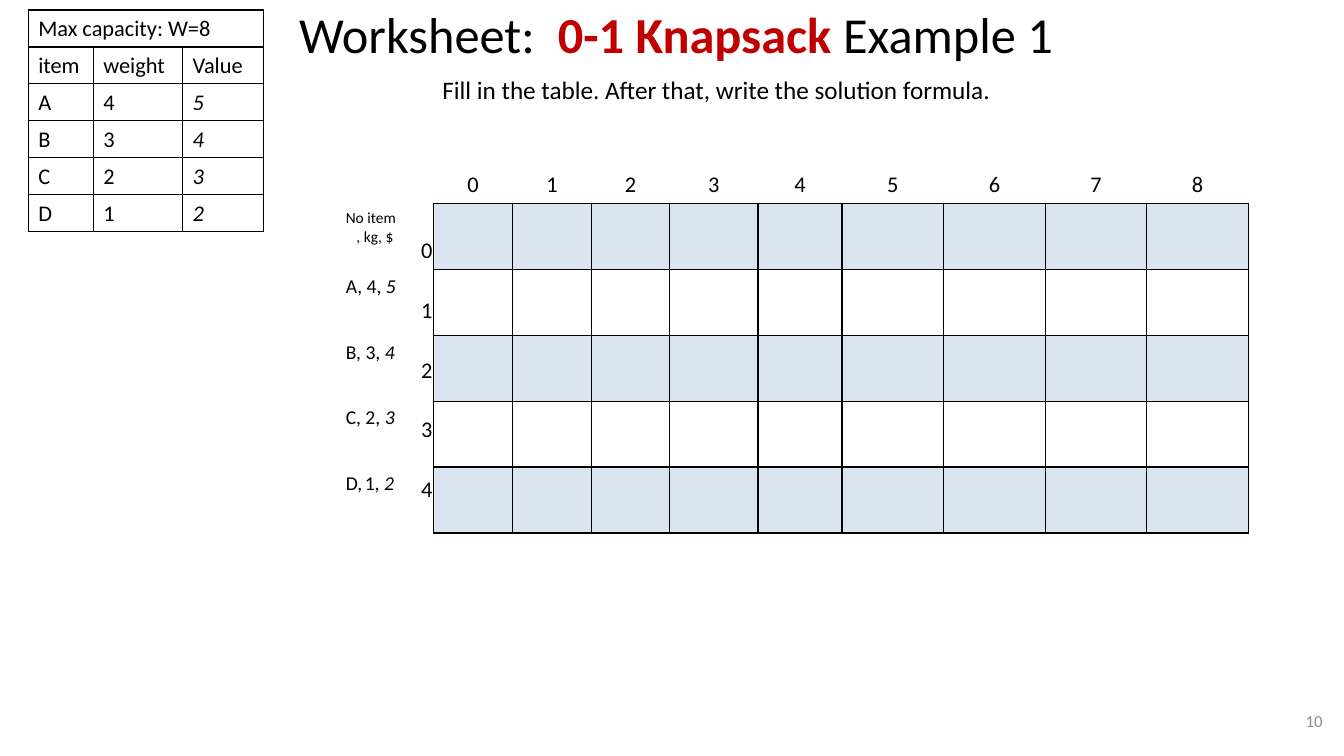
import lxml.etree
import pptx
import pptx.dml.color
import pptx.enum.text
import pptx.oxml
import pptx.oxml.ns
import pptx.util

Cm = pptx.util.Cm
Pt = pptx.util.Pt
ALIGN = pptx.enum.text.PP_ALIGN
ANCHOR = pptx.enum.text.MSO_ANCHOR
qn = pptx.oxml.ns.qn

BLACK = pptx.dml.color.RGBColor(0x00, 0x00, 0x00)
WHITE = pptx.dml.color.RGBColor(0xFF, 0xFF, 0xFF)
RED = pptx.dml.color.RGBColor(0xC0, 0x00, 0x00)
GREY = pptx.dml.color.RGBColor(0x8C, 0x8C, 0x8C)
BLUE = pptx.dml.color.RGBColor(0x4F, 0x81, 0xBD)

NO_STYLE = "{2D5ABB26-0587-4C30-8999-92F81FD0307C}"
ITEMS = [("A", 4, 5), ("B", 3, 4), ("C", 2, 3), ("D", 1, 2)]
CAPACITY = 8


def style_paragraph(para, size, color=BLACK, align=ALIGN.LEFT):
    para.font.name = "Calibri"
    para.font.size = Pt(size)
    para.font.color.rgb = color
    para.alignment = align


def draw_borders(cell, sides):
    """Give the cell thin black lines on the sides named in "LRTB" order."""
    properties = cell._tc.get_or_add_tcPr()
    for position, side in enumerate(sides):
        line = lxml.etree.Element(qn("a:ln" + side), w=str(Pt(1)))
        fill = lxml.etree.SubElement(line, qn("a:solidFill"))
        lxml.etree.SubElement(fill, qn("a:srgbClr"), val=str(BLACK))
        properties.insert(position, line)


deck = pptx.Presentation()
deck.slide_width, deck.slide_height = Cm(33.87), Cm(19.05)
page = deck.slides.add_slide(deck.slide_layouts[6])

# Title, instruction and page number
texts = [
    ((5.51, 0.2, 23.06, 1.27), 36, BLACK, ALIGN.CENTER, ANCHOR.MIDDLE,
     ["Worksheet:  ", "0-1 Knapsack ", "Example 1"]),
    ((10.9, 1.75, 14.5, 1.02), 18, BLACK, ALIGN.LEFT, ANCHOR.TOP,
     ["Fill in the table. After that, write the solution formula."]),
    ((25.68, 17.65, 7.9, 1.02), 12, GREY, ALIGN.RIGHT, ANCHOR.MIDDLE, ["10"]),
]
for place, size, color, align, anchor, words in texts:
    box = page.shapes.add_textbox(*[Cm(length) for length in place])
    box.text_frame.word_wrap = True
    box.text_frame.vertical_anchor = anchor
    para = box.text_frame.paragraphs[0]
    style_paragraph(para, size, color, align)
    for word in words:
        span = para.add_run()
        span.text = word
        if word.startswith("0-1"):
            span.font.bold = True
            span.font.color.rgb = RED

# Empty tables: left, top, column widths, row height, row count
layouts = [
    (8.46, 3.47, [2.46, 2, 1.98, 1.98, 2.22, 2.12] + [2.56] * 4, 1.66, 6),
    (10.36, 5.84, [1.07], 1.51, 5),
    (0.71, 0.25, [1.64, 2.25, 2.05], 0.93, 6),
]
tables = []
for left, top, widths, height, count in layouts:
    frame = page.shapes.add_table(count, len(widths), Cm(left), Cm(top),
                                  Cm(sum(widths)), Cm(height * count))
    table = frame.table
    table.first_row = table.horz_banding = False
    table._tbl.tblPr.find(qn("a:tableStyleId")).text = NO_STYLE
    for column, width in zip(table.columns, widths):
        column.width = Cm(width)
    for row in table.rows:
        row.height = Cm(height)
    for cell in table.iter_cells():
        cell.fill.background()
        style_paragraph(cell.text_frame.paragraphs[0], 16)
    tables.append(table)
worksheet, row_numbers, item_list = tables

# Worksheet: weights across the top, bordered cells shaded on every other row
for weight in range(CAPACITY + 1):
    column = weight + 1
    heading = worksheet.cell(0, column)
    heading.vertical_anchor = ANCHOR.BOTTOM
    heading.text_frame.paragraphs[0].add_run().text = str(weight)
    heading.text_frame.paragraphs[0].alignment = ALIGN.CENTER
    draw_borders(heading, "B")
    for row in range(1, len(ITEMS) + 2):
        cell = worksheet.cell(row, column)
        draw_borders(cell, "LRTB")
        if row % 2:
            cell.fill.solid()
            cell.fill.fore_color.rgb = BLUE
            tint = cell._tc.tcPr.find(qn("a:solidFill")).find(qn("a:srgbClr"))
            lxml.etree.SubElement(tint, qn("a:alpha"), val="20000")

# Worksheet: row labels
for row in range(1, len(ITEMS) + 2):
    label = worksheet.cell(row, 0)
    label.fill.solid()
    label.fill.fore_color.rgb = WHITE
    draw_borders(label, "R")

no_item = worksheet.cell(1, 0).text_frame
no_item.paragraphs[0].add_run().text = "No item"
units = no_item.add_paragraph()
units.add_run().text = ", kg, $"
for para in no_item.paragraphs:
    style_paragraph(para, 11)
units._p.get_or_add_pPr().set("marL", str(Cm(0.27)))

for row, (name, weight, value) in enumerate(ITEMS, start=2):
    para = worksheet.cell(row, 0).text_frame.paragraphs[0]
    style_paragraph(para, 14)
    for word in (f"{name},", " ", f"{weight}, ", str(value)):
        span = para.add_run()
        span.text = word
        if word == " " and name == "D":
            span.font.size = Pt(8)
    span.font.italic = True

# Row numbers
for number in range(len(ITEMS) + 1):
    row_numbers.cell(number, 0).text_frame.paragraphs[0].add_run().text = str(number)

# Item list
for cell in item_list.iter_cells():
    draw_borders(cell, "LRTB")
item_list.cell(0, 0).merge(item_list.cell(0, 2))
item_rows = [[f"Max capacity: W={CAPACITY}"], ["item", "weight", "Value"], *ITEMS]
for row, entries in enumerate(item_rows):
    for column, entry in enumerate(entries):
        para = item_list.cell(row, column).text_frame.paragraphs[0]
        para.add_run().text = str(entry)
        if row > 1 and column == 2:
            para.font.italic = True

deck.save("out.pptx")
